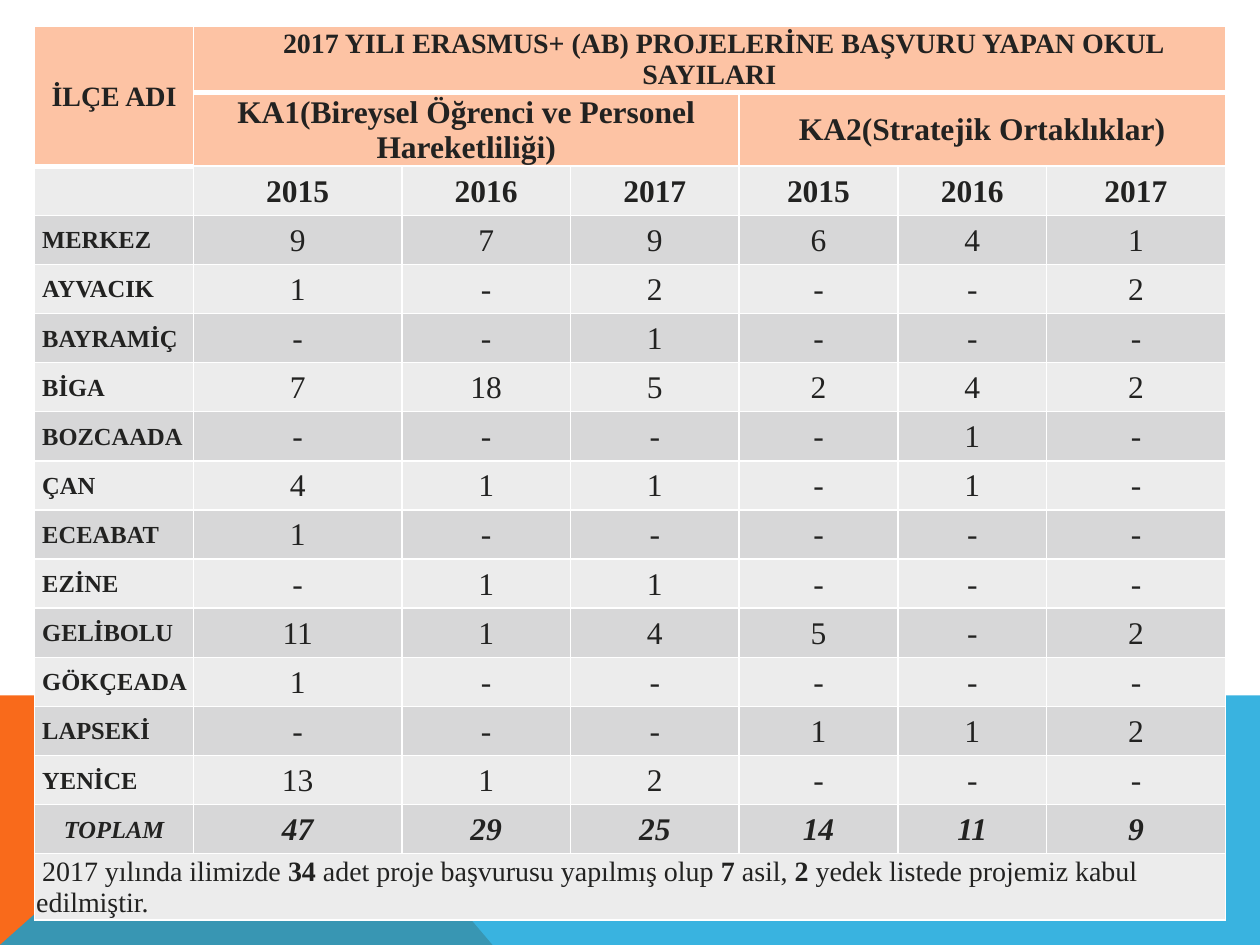
from dataclasses import dataclass

from lxml.etree import SubElement
from pptx import Presentation
from pptx.dml.color import RGBColor
from pptx.enum.text import MSO_ANCHOR as Anchor, PP_ALIGN as Align
from pptx.oxml.ns import qn
from pptx.util import Cm, Pt


@dataclass(frozen=True)
class Theme:
    font: str = "Times New Roman"
    ink: str = "222221"
    header: str = "FDC3A4"
    light: str = "ECECEC"
    dark: str = "D7D7D8"
    border: str = "FFFFFF"
    orange: str = "F96A1B"
    blue: str = "08A1D9"
    name_size: int = 14
    title_size: int = 16
    value_size: int = 18
    thin: int = 1
    thick: int = 3


THEME = Theme()
SLIDE_WIDTH, SLIDE_HEIGHT = 25.4, 19.05
BAND_TOP, BAND_SPLIT, ORANGE_RIGHT = 14.02, 5.66, 9.93
COLUMN_WIDTHS = [3.2, 4.2, 3.4, 3.4, 3.2, 3.0, 3.6]
HEADER_HEIGHTS = [1.34, 1.49]
ROW_HEIGHT, NOTE_HEIGHT = 0.99, 1.34
NAME_INDENT, TITLE_INDENT = 0.12, 0.56

YEARS = ["2015", "2016", "2017"] * 2
DISTRICTS = [
    ("MERKEZ", "9 7 9 6 4 1"),
    ("AYVACIK", "1 - 2 - - 2"),
    ("BAYRAMİÇ", "- - 1 - - -"),
    ("BİGA", "7 18 5 2 4 2"),
    ("BOZCAADA", "- - - - 1 -"),
    ("ÇAN", "4 1 1 - 1 -"),
    ("ECEABAT", "1 - - - - -"),
    ("EZİNE", "- 1 1 - - -"),
    ("GELİBOLU", "11 1 4 5 - 2"),
    ("GÖKÇEADA", "1 - - - - -"),
    ("LAPSEKİ", "- - - 1 1 2"),
    ("YENİCE", "13 1 2 - - -"),
]
TOTALS = "47 29 25 14 11 9"
NOTE = [
    ("2017 yılında ilimizde ", False),
    ("34", True),
    (" adet proje başvurusu yapılmış olup ", False),
    ("7", True),
    (" asil, ", False),
    ("2", True),
    (" yedek listede projemiz kabul edilmiştir.", False),
]


def add_band(slide, corners, color, opacity=100):
    points = [(Cm(x), Cm(y)) for x, y in corners]
    builder = slide.shapes.build_freeform(*points[0], scale=1.0)
    builder.add_line_segments(points[1:], close=True)
    band = builder.convert_to_shape()
    band.shadow.inherit = False
    band.line.fill.background()
    band.fill.solid()
    band.fill.fore_color.rgb = RGBColor.from_string(color)
    if opacity < 100:
        tint = band.fill._xPr.find(qn("a:solidFill"))[0]
        SubElement(tint, qn("a:alpha"), val=str(opacity * 1000))


def add_border(cell, side, width):
    edge = SubElement(cell._tc.get_or_add_tcPr(), qn(f"a:ln{side}"), w=str(Pt(width)))
    SubElement(SubElement(edge, qn("a:solidFill")), qn("a:srgbClr"), val=THEME.border)


def style_cell(cell, row, column):
    under_title = row == 1 or (row, column) == (2, 0)
    over_rule = row == 0 or (row, column) == (1, 0)
    add_border(cell, "L", THEME.thin)
    add_border(cell, "R", THEME.thin)
    add_border(cell, "T", THEME.thick if under_title else THEME.thin)
    add_border(cell, "B", THEME.thick if over_rule else THEME.thin)
    if row < len(HEADER_HEIGHTS):
        color = THEME.header
    else:
        color = THEME.dark if row % 2 else THEME.light
    cell.fill.solid()
    cell.fill.fore_color.rgb = RGBColor.from_string(color)
    cell.margin_left = cell.margin_right = cell.margin_top = Cm(0.03)
    cell.margin_bottom = 0
    cell.vertical_anchor = Anchor.MIDDLE


def write(cell, runs, size, bold=False, italic=False, align=Align.CENTER, indent=0):
    paragraph = cell.text_frame.paragraphs[0]
    paragraph.alignment = align
    if indent:
        paragraph._p.get_or_add_pPr().set("indent", str(Cm(indent)))
    font = paragraph.font
    font.name, font.size = THEME.font, Pt(size)
    font.bold, font.italic = bold, italic
    font.color.rgb = RGBColor.from_string(THEME.ink)
    if isinstance(runs, str):
        paragraph.add_run().text = runs
        return
    for text, emphasis in runs:
        run = paragraph.add_run()
        run.text = text
        run.font.bold = emphasis


def write_values(table, row, values, **style):
    for column, value in enumerate(values, 1):
        write(table.cell(row, column), value, THEME.value_size, **style)


def add_grid(slide):
    heights = HEADER_HEIGHTS + [ROW_HEIGHT] * (len(DISTRICTS) + 2) + [NOTE_HEIGHT]
    table = slide.shapes.add_table(
        len(heights), len(COLUMN_WIDTHS), Cm(0.7), Cm(0.52),
        Cm(sum(COLUMN_WIDTHS)), Cm(sum(heights)),
    ).table
    table.first_row = table.horz_banding = False
    for column, width in zip(table.columns, COLUMN_WIDTHS):
        column.width = Cm(width)
    for row, height in enumerate(heights):
        table.rows[row].height = Cm(height)
        for column in range(len(COLUMN_WIDTHS)):
            style_cell(table.cell(row, column), row, column)
    note_row = len(heights) - 1
    for first, last in [((0, 0), (1, 0)), ((0, 1), (0, 6)), ((1, 1), (1, 3)),
                        ((1, 4), (1, 6)), ((note_row, 0), (note_row, 6))]:
        table.cell(*first).merge(table.cell(*last))
    return table


def fill_headings(table):
    write(table.cell(0, 0), "İLÇE ADI", THEME.title_size, bold=True)
    write(table.cell(0, 1), "2017 YILI ERASMUS+ (AB) PROJELERİNE BAŞVURU YAPAN OKUL SAYILARI",
          THEME.title_size, bold=True, indent=TITLE_INDENT)
    write(table.cell(1, 1), "KA1(Bireysel Öğrenci ve Personel Hareketliliği)",
          THEME.value_size, bold=True)
    write(table.cell(1, 4), "KA2(Stratejik Ortaklıklar)", THEME.value_size, bold=True)
    write_values(table, 2, YEARS, bold=True)


def fill_districts(table):
    for row, (district, counts) in enumerate(DISTRICTS, 3):
        write(table.cell(row, 0), district, THEME.name_size, bold=True,
              align=Align.LEFT, indent=NAME_INDENT)
        write_values(table, row, counts.split())


def fill_summary(table):
    total_row = len(DISTRICTS) + 3
    write(table.cell(total_row, 0), "TOPLAM", THEME.name_size, bold=True, italic=True)
    write_values(table, total_row, TOTALS.split(), bold=True, italic=True)
    write(table.cell(total_row + 1, 0), NOTE, THEME.title_size,
          align=Align.LEFT, indent=NAME_INDENT)


def main():
    presentation = Presentation()
    presentation.slide_width, presentation.slide_height = Cm(SLIDE_WIDTH), Cm(SLIDE_HEIGHT)
    slide = presentation.slides.add_slide(presentation.slide_layouts[6])
    add_band(slide, [(0, SLIDE_HEIGHT), (0, BAND_TOP), (BAND_SPLIT, BAND_TOP),
                     (ORANGE_RIGHT, SLIDE_HEIGHT)], THEME.orange)
    add_band(slide, [(0, SLIDE_HEIGHT), (BAND_SPLIT, BAND_TOP), (SLIDE_WIDTH, BAND_TOP),
                     (SLIDE_WIDTH, SLIDE_HEIGHT)], THEME.blue, opacity=80)
    table = add_grid(slide)
    fill_headings(table)
    fill_districts(table)
    fill_summary(table)
    presentation.save("out.pptx")


if __name__ == "__main__":
    main()
